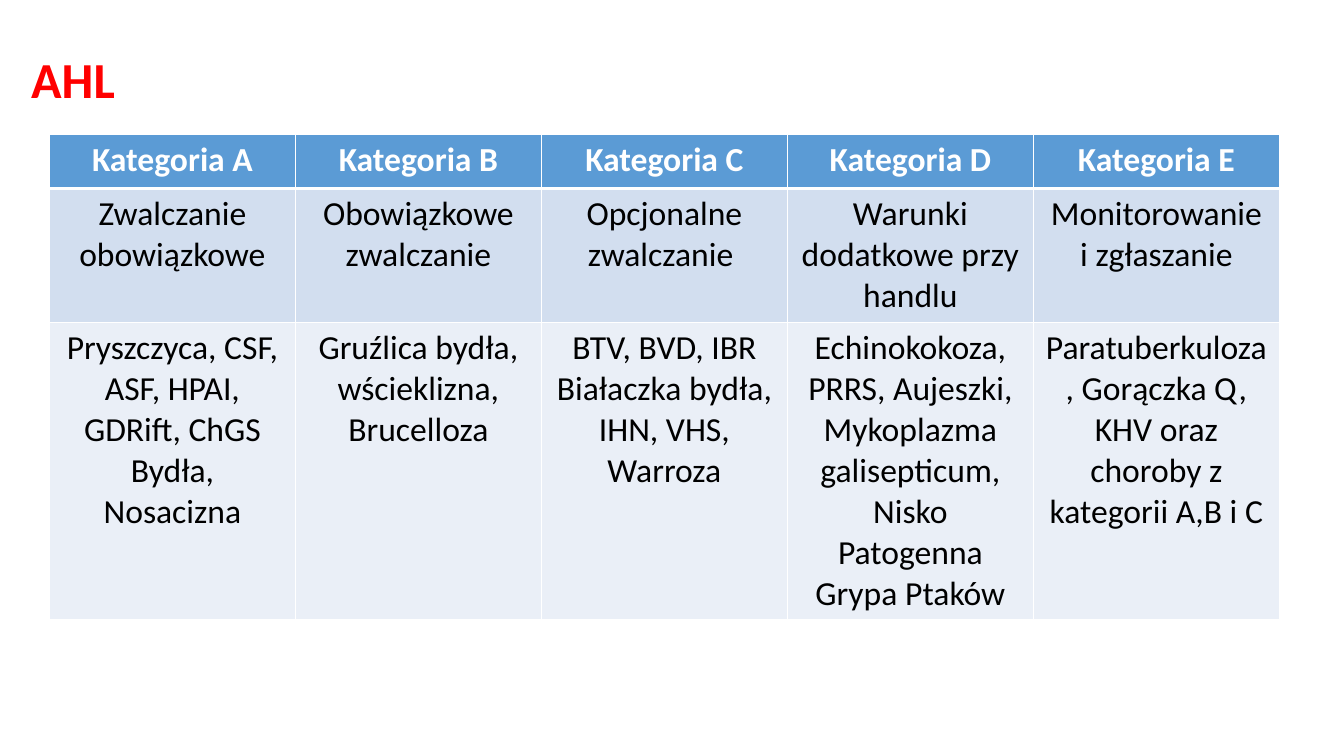
import pptx
import pptx.dml.color
import pptx.enum.text
import pptx.oxml
import pptx.oxml.ns
import pptx.util

WHITE = pptx.dml.color.RGBColor(0xFF, 0xFF, 0xFF)
BLACK = pptx.dml.color.RGBColor(0x00, 0x00, 0x00)
RED = pptx.dml.color.RGBColor(0xFF, 0x00, 0x00)
HEADER_BLUE = pptx.dml.color.RGBColor(0x5B, 0x9B, 0xD5)
MEASURE_BLUE = pptx.dml.color.RGBColor(0xD2, 0xDE, 0xEF)
DISEASE_BLUE = pptx.dml.color.RGBColor(0xEA, 0xEF, 0xF7)

CENTER = pptx.enum.text.PP_ALIGN.CENTER
LEFT = pptx.enum.text.PP_ALIGN.LEFT

EMU_PER_PX = 9144  # 100 px to the inch

MEASURES = [
    "Zwalczanie obowiązkowe",
    "Obowiązkowe zwalczanie",
    "Opcjonalne zwalczanie ",
    "Warunki dodatkowe przy handlu",
    "Monitorowanie i zgłaszanie",
]
DISEASES = [
    "Pryszczyca, CSF, ASF, HPAI, GDRift, ChGS Bydła, Nosacizna",
    "Gruźlica bydła, wścieklizna, Brucelloza",
    "BTV, BVD, IBR Białaczka bydła, IHN, VHS, Warroza",
    "Echinokokoza, PRRS, Aujeszki, Mykoplazma galisepticum, Nisko Patogenna Grypa Ptaków",
    "Paratuberkuloza, Gorączka Q, KHV oraz choroby z kategorii A,B i C",
]
# Each row: height in px, fill, text colour, bold, texts
CATEGORY_ROWS = [
    (54, HEADER_BLUE, WHITE, True, [f"Kategoria {letter}" for letter in "ABCDE"]),
    (133, MEASURE_BLUE, BLACK, False, MEASURES),
    (293, DISEASE_BLUE, BLACK, False, DISEASES),
]


def px(length):
    return pptx.util.Emu(length * EMU_PER_PX)


def write_text(text_frame, text, *, font, size, color, bold=False, align=LEFT, line_spacing=1.0):
    paragraph = text_frame.paragraphs[0]
    paragraph.alignment = align
    paragraph.line_spacing = line_spacing
    run = paragraph.add_run()
    run.text = text
    run.font.name = font
    run.font.size = pptx.util.Pt(size)
    run.font.bold = bold
    run.font.color.rgb = color


def set_borders(cell, color, **widths):
    """Add cell borders, given as L, R, T and B widths in points."""
    properties = cell._tc.get_or_add_tcPr()
    for side, width in widths.items():
        properties.append(pptx.oxml.parse_xml(
            f'<a:ln{side} {pptx.oxml.ns.nsdecls("a")} w="{pptx.util.Pt(width)}">'
            f'<a:solidFill><a:srgbClr val="{color}"/></a:solidFill></a:ln{side}>'
        ))


class SlideBuilder:
    def __init__(self, slide, font):
        self.slide = slide
        self.font = font

    def title(self, text, left, top, width, height):
        shape = self.slide.shapes.title
        shape.left, shape.top = px(left), px(top)
        shape.width, shape.height = px(width), px(height)
        text_frame = shape.text_frame
        text_frame.word_wrap = True
        text_frame.auto_size = pptx.enum.text.MSO_AUTO_SIZE.NONE
        text_frame.vertical_anchor = pptx.enum.text.MSO_ANCHOR.BOTTOM
        text_frame.margin_bottom = 0
        write_text(text_frame, text, font=self.font, size=36, color=RED, bold=True, line_spacing=0.9)

    def table(self, rows, left, top, column_width):
        column_count = len(rows[0][-1])
        total_height = sum(row[0] for row in rows)
        table = self.slide.shapes.add_table(
            len(rows), column_count, px(left), px(top),
            px(column_width * column_count), px(total_height),
        ).table
        for column in table.columns:
            column.width = px(column_width)
        for row_index, (height, fill, color, bold, texts) in enumerate(rows):
            table.rows[row_index].height = px(height)
            top_width = 3 if row_index == 1 else 1
            bottom_width = 3 if row_index == 0 else 1
            for column_index, text in enumerate(texts):
                cell = table.cell(row_index, column_index)
                set_borders(cell, WHITE, L=1, R=1, T=top_width, B=bottom_width)
                cell.fill.solid()
                cell.fill.fore_color.rgb = fill
                write_text(cell.text_frame, text, font=self.font, size=24,
                           color=color, bold=bold, align=CENTER)


def main():
    presentation = pptx.Presentation()
    presentation.slide_width = px(1333)
    presentation.slide_height = px(750)
    title_only_layout = presentation.slide_layouts[5]
    builder = SlideBuilder(presentation.slides.add_slide(title_only_layout), "Calibri")
    builder.title("AHL", left=21, top=0, width=1199, height=109)
    builder.table(CATEGORY_ROWS, left=49, top=133, column_width=244)
    presentation.save("out.pptx")


if __name__ == "__main__":
    main()
